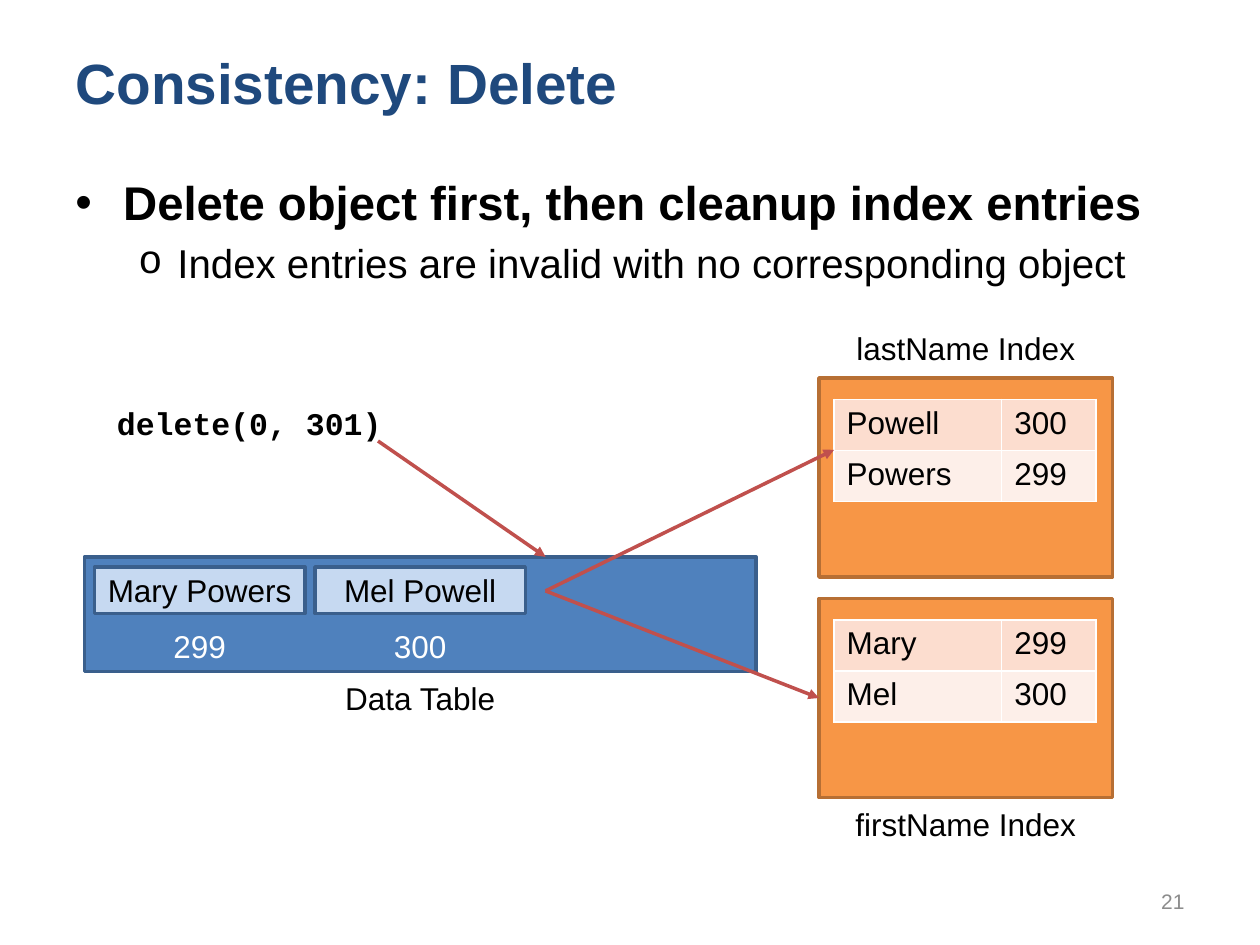
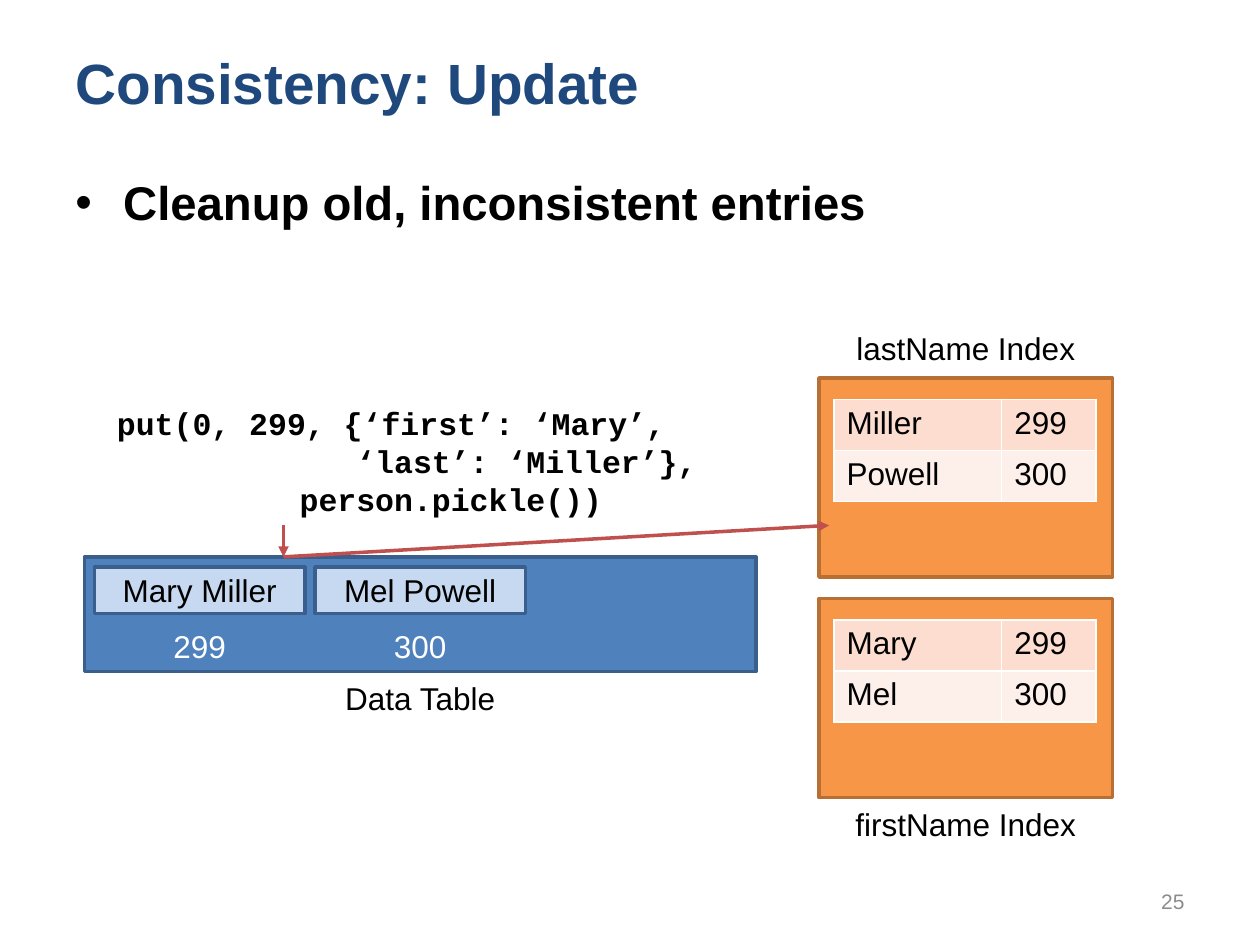
"""Builds two slides on keeping a data table and its indexes consistent."""
from dataclasses import dataclass

from lxml import etree
from pptx import Presentation
from pptx.dml.color import RGBColor
from pptx.enum.shapes import MSO_CONNECTOR, MSO_SHAPE
from pptx.enum.text import MSO_ANCHOR, PP_ALIGN
from pptx.oxml.ns import qn
from pptx.util import Inches, Pt

RECT, STRAIGHT = MSO_SHAPE.RECTANGLE, MSO_CONNECTOR.STRAIGHT
LEFT, CENTER, RIGHT = PP_ALIGN.LEFT, PP_ALIGN.CENTER, PP_ALIGN.RIGHT
TOP, MIDDLE = MSO_ANCHOR.TOP, MSO_ANCHOR.MIDDLE
TITLE_ONLY = 5


@dataclass(frozen=True)
class Theme:
    font: str = "Arial"
    mono: str = "Courier New"
    title: str = "1F497D"
    text: str = "000000"
    light: str = "FFFFFF"
    muted: str = "8C8C8C"
    arrow: str = "C0504D"
    store: str = "4F81BD"
    record: str = "C6D9F1"
    store_line: str = "3A5F8C"
    index: str = "F79646"
    index_line: str = "B76F34"
    rows: tuple[str, ...] = ("FCDDCF", "FDEFE9")
    title_size: float = 32.4
    point_size: float = 27
    sub_size: float = 23
    body_size: float = 18
    number_size: float = 12
    line: float = 2
    border: float = 1


@dataclass(frozen=True)
class Box:
    x: float
    y: float
    w: float
    h: float

    def inches(self) -> tuple:
        return tuple(Inches(v) for v in (self.x, self.y, self.w, self.h))


@dataclass(frozen=True)
class Bullet:
    char: str
    font: str
    size: float
    bold: bool
    left: float
    hang: float


@dataclass(frozen=True)
class Index:
    name: str
    top: float
    label_top: float


@dataclass(frozen=True)
class Arrow:
    x1: float
    y1: float
    x2: float
    y2: float


@dataclass(frozen=True)
class Page:
    title: str
    number: str
    points: tuple[str, ...]
    code: tuple[tuple[str, float], ...]
    records: tuple[tuple[str, str], ...]
    last_names: tuple[tuple[str, str], ...]
    first_names: tuple[tuple[str, str], ...]
    arrows: tuple[Arrow, ...]


T = Theme()
LABEL_H = 0.4
STORE = Box(0.67, 4.42, 5.33, 0.91)
RECORD = Box(0.75, 4.5, 1.67, 0.37)
RECORD_STEP = 1.75
INDEX_X, INDEX_W, INDEX_H = 6.5, 2.33, 1.58
TABLE_DX, TABLE_DY, ROW_H = 0.12, 0.17, 0.405
COLUMNS = (1.33, 0.75)
LAST_INDEX = Index("lastName Index", 3, 2.56)
FIRST_INDEX = Index("firstName Index", 4.75, 6.34)
BULLETS = (
    Bullet("•", T.font, T.point_size, True, 0.38, -0.38),
    Bullet("o", T.mono, T.sub_size, False, 0.81, -0.31),
)
FIRST_NAMES = (("Mary", "299"), ("Mel", "300"))

PAGES = (
    Page(
        "Consistency: Delete", "21",
        ("Delete object first, then cleanup index entries",
         "Index entries are invalid with no corresponding object"),
        (("delete(0, 301)", 0),),
        (("Mary Powers", "299"), ("Mel Powell", "300")),
        (("Powell", "300"), ("Powers", "299")), FIRST_NAMES,
        (Arrow(3, 3.5, 4.33, 4.42), Arrow(4.33, 4.69, 6.62, 3.57),
         Arrow(4.33, 4.69, 6.5, 5.54)),
    ),
    Page(
        "Consistency: Update", "25",
        ("Cleanup old, inconsistent entries",),
        (("put(0, 299, {‘first’: ‘Mary’,", 0), ("‘last’: ‘Miller’},", 1.9),
         ("person.pickle())", 1.45)),
        (("Mary Miller", "299"), ("Mel Powell", "300")),
        (("Miller", "299"), ("Powell", "300")), FIRST_NAMES,
        (Arrow(2.25, 4.17, 2.25, 4.42), Arrow(2.25, 4.42, 6.58, 4.17)),
    ),
)


def rgb(color: str) -> RGBColor:
    return RGBColor.from_string(color)


def write(p, text: str, *, size: float = T.body_size, color: str = T.text,
          font: str = T.font, bold: bool = False, align=LEFT) -> None:
    p.alignment = align
    r = p.add_run()
    r.text = text
    r.font.name, r.font.size, r.font.bold = font, Pt(size), bold
    r.font.color.rgb = rgb(color)


def indent(p, left: float, hang: float = 0):
    pPr = p._p.get_or_add_pPr()
    pPr.set("marL", str(Inches(left)))
    pPr.set("indent", str(Inches(hang)))
    return pPr


def paragraphs(tf, count: int) -> list:
    return [tf.paragraphs[0]] + [tf.add_paragraph() for _ in range(count - 1)]


def text_frame(slide, box: Box, anchor=TOP):
    tf = slide.shapes.add_textbox(*box.inches()).text_frame
    tf.word_wrap = True
    tf.vertical_anchor = anchor
    return tf


def add_label(slide, box: Box, text: str, anchor=TOP, **style) -> None:
    style = {"align": CENTER, **style}
    write(text_frame(slide, box, anchor).paragraphs[0], text, **style)


def add_rect(slide, box: Box, fill: str, line: str, text: str = "") -> None:
    sp = slide.shapes.add_shape(RECT, *box.inches())
    sp.shadow.inherit = False
    sp.fill.solid()
    sp.fill.fore_color.rgb = rgb(fill)
    sp.line.color.rgb = rgb(line)
    sp.line.width = Pt(T.line)
    if text:
        sp.text_frame.vertical_anchor = MIDDLE
        write(sp.text_frame.paragraphs[0], text, align=CENTER)


def add_arrow(slide, arrow: Arrow) -> None:
    ends = (arrow.x1, arrow.y1, arrow.x2, arrow.y2)
    sp = slide.shapes.add_connector(STRAIGHT, *(Inches(v) for v in ends))
    sp.line.color.rgb = rgb(T.arrow)
    sp.line.width = Pt(T.line)
    etree.SubElement(sp.line._get_or_add_ln(), qn("a:tailEnd"), type="triangle")
    etree.SubElement(sp._element.spPr, qn("a:effectLst"))


def style_cell(cell, fill: str) -> None:
    tcPr = cell._tc.get_or_add_tcPr()
    for side in ("lnL", "lnR", "lnT", "lnB"):
        ln = etree.SubElement(tcPr, qn(f"a:{side}"), w=str(Pt(T.border)))
        solid = etree.SubElement(ln, qn("a:solidFill"))
        etree.SubElement(solid, qn("a:srgbClr"), val=T.light)
    cell.fill.solid()
    cell.fill.fore_color.rgb = rgb(fill)


def add_index(slide, index: Index, entries: tuple[tuple[str, str], ...]) -> None:
    add_rect(slide, Box(INDEX_X, index.top, INDEX_W, INDEX_H), T.index, T.index_line)
    add_label(slide, Box(INDEX_X, index.label_top, INDEX_W, LABEL_H), index.name)
    box = Box(INDEX_X + TABLE_DX, index.top + TABLE_DY, sum(COLUMNS), ROW_H * len(entries))
    table = slide.shapes.add_table(len(entries), len(COLUMNS), *box.inches()).table
    table.first_row = table.horz_banding = False
    for column, width in zip(table.columns, COLUMNS):
        column.width = Inches(width)
    for row, entry, fill in zip(table.rows, entries, T.rows):
        for cell, text in zip(row.cells, entry):
            style_cell(cell, fill)
            write(cell.text_frame.paragraphs[0], text)


def add_store(slide, records: tuple[tuple[str, str], ...]) -> None:
    add_rect(slide, STORE, T.store, T.store_line)
    for i, (name, key) in enumerate(records):
        x = RECORD.x + i * RECORD_STEP
        add_rect(slide, Box(x, RECORD.y, RECORD.w, RECORD.h), T.record, T.store_line, name)
        add_label(slide, Box(x, 4.93, RECORD.w, LABEL_H), key, color=T.light)
    add_label(slide, Box(STORE.x, 5.34, STORE.w, LABEL_H), "Data Table")


def add_points(slide, points: tuple[str, ...]) -> None:
    tf = text_frame(slide, Box(0.5, 1.33, 9, 5.37))
    for level, (p, text) in enumerate(zip(paragraphs(tf, len(points)), points)):
        bullet = BULLETS[level]
        p.level = level
        pPr = indent(p, bullet.left, bullet.hang)
        before = etree.SubElement(pPr, qn("a:spcBef"))
        etree.SubElement(before, qn("a:spcPct"), val="20000")
        etree.SubElement(pPr, qn("a:buFont"), typeface=bullet.font)
        etree.SubElement(pPr, qn("a:buChar"), char=bullet.char)
        write(p, text, size=bullet.size, bold=bullet.bold)


def add_code(slide, lines: tuple[tuple[str, float], ...]) -> None:
    tf = text_frame(slide, Box(0.83, 3.16, 5.33, 0.1 + 0.3 * len(lines)))
    for p, (text, left) in zip(paragraphs(tf, len(lines)), lines):
        indent(p, left)
        write(p, text, font=T.mono, bold=True)


def add_title(slide, text: str) -> None:
    sp = slide.shapes.title
    sp.left, sp.top, sp.width, sp.height = Box(0.5, 0.3, 9, 0.7).inches()
    sp.text_frame.vertical_anchor = MIDDLE
    write(sp.text_frame.paragraphs[0], text, size=T.title_size, color=T.title, bold=True)


def add_page(prs, page: Page) -> None:
    slide = prs.slides.add_slide(prs.slide_layouts[TITLE_ONLY])
    add_title(slide, page.title)
    add_points(slide, page.points)
    add_store(slide, page.records)
    add_index(slide, LAST_INDEX, page.last_names)
    add_index(slide, FIRST_INDEX, page.first_names)
    add_code(slide, page.code)
    for arrow in page.arrows:
        add_arrow(slide, arrow)
    add_label(slide, Box(7.17, 6.95, 2.33, LABEL_H), page.number, MIDDLE,
              size=T.number_size, color=T.muted, align=RIGHT)


def main() -> None:
    prs = Presentation()
    prs.slide_width, prs.slide_height = Inches(10), Inches(7.5)
    for page in PAGES:
        add_page(prs, page)
    prs.save("out.pptx")


if __name__ == "__main__":
    main()
